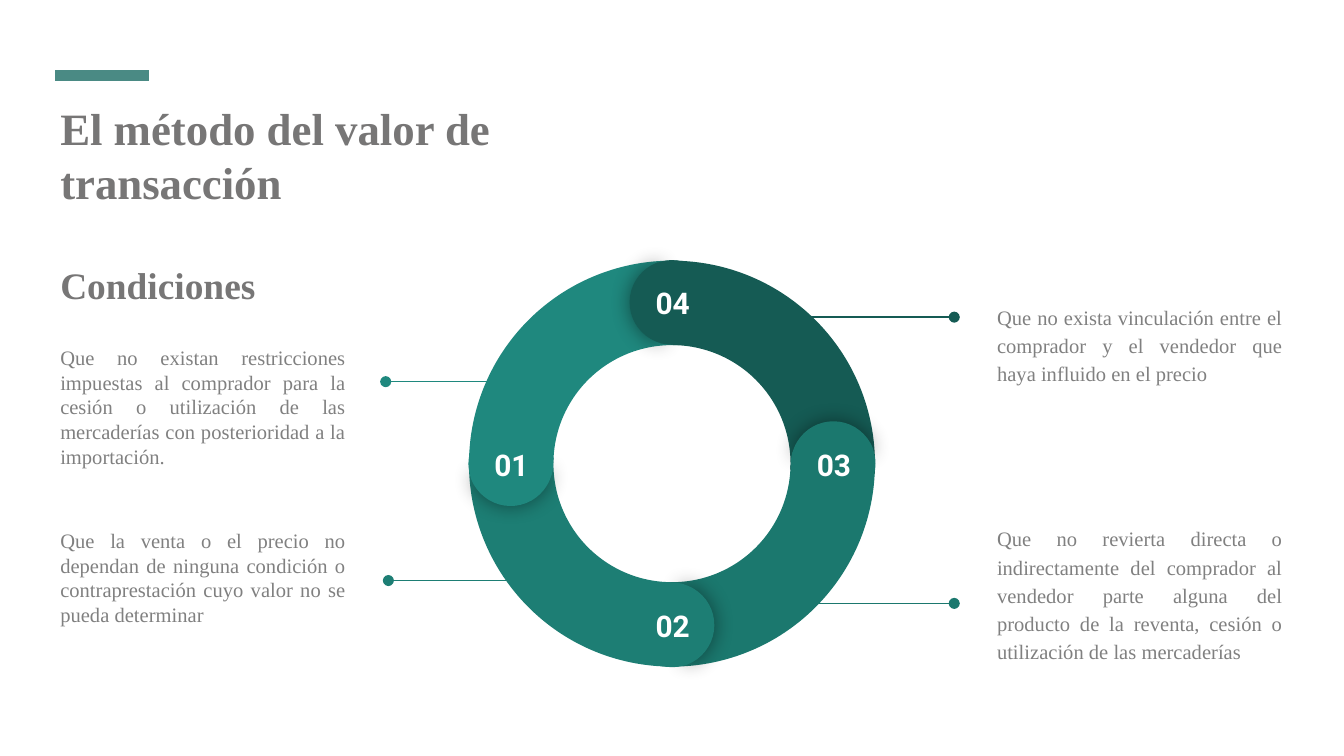
from math import cos, radians, sin

from lxml import etree
from pptx import Presentation
from pptx.dml.color import RGBColor
from pptx.enum.shapes import MSO_CONNECTOR, MSO_SHAPE
from pptx.enum.text import MSO_ANCHOR, PP_ALIGN
from pptx.oxml import parse_xml
from pptx.oxml.ns import nsdecls, qn
from pptx.util import Inches, Pt

COLORS = {
    "bar": "4A8A84",
    "01": "1F887E",
    "02": "1D7E74",
    "03": "1B786E",
    "04": "155B54",
    "title": "777676",
    "body": "808080",
    "white": "FFFFFF",
    "shade": "000000",
}
SERIF, SANS = "Times New Roman", "Roboto"
WIDE = 10
MID_X, MID_Y = 5, 3.45
RING, CAP, ORBIT = 3.02, 0.63, 1.2
TURNS = {"03": 0, "02": 90, "01": 180, "04": 270}
NOTES = [
    ("01", 0.35, 2.32, 1, (4.01, 2.87, 2.84),
     "Que no existan restricciones impuestas al comprador para la cesión o "
     "utilización de las mercaderías con posterioridad a la importación."),
    ("02", 0.35, 3.59, 1, (4.32, 2.89, 4.32),
     "Que la venta o el precio no dependan de ninguna condición o "
     "contraprestación cuyo valor no se pueda determinar"),
    ("03", 7.32, 3.71, 1.15, (5.7, 7.1, 4.49),
     "Que no revierta directa o indirectamente del comprador al vendedor parte "
     "alguna del producto de la reventa, cesión o utilización de las mercaderías"),
    ("04", 7.32, 1.85, 1.15, (5.7, 7.1, 2.36),
     "Que no exista vinculación entre el comprador y el vendedor que haya "
     "influido en el precio"),
]


def color(key):
    return RGBColor.from_string(COLORS[key])


def add_sector(slide, kind, x, y, size, turn, angles, key, ratio=None):
    shape = slide.shapes.add_shape(
        kind, Inches(x - size / 2), Inches(y - size / 2), Inches(size), Inches(size))
    for i, angle in enumerate(angles):
        shape.adjustments[i] = angle * 0.6
    if ratio:
        shape.adjustments[2] = ratio
    shape.rotation = turn % 360
    shape.shadow.inherit = False
    shape.fill.solid()
    shape.fill.fore_color.rgb = color(key)
    shape.line.fill.background()
    return shape


def add_glow(shape):
    effects = shape._element.spPr.find(qn("a:effectLst"))
    effects.append(parse_xml(
        f'<a:outerShdw {nsdecls("a")} blurRad="{Pt(11.2)}" dist="0" dir="0" '
        'algn="ctr" rotWithShape="0">'
        f'<a:srgbClr val="{COLORS["shade"]}"><a:alpha val="43000"/></a:srgbClr>'
        '</a:outerShdw>'))


def add_line(slide, start, end, y, key, width, dot=False):
    line = slide.shapes.add_connector(
        MSO_CONNECTOR.STRAIGHT, Inches(start), Inches(y), Inches(end), Inches(y))
    line.line.color.rgb = color(key)
    line.line.width = Pt(width)
    if dot:
        etree.SubElement(line.line._get_or_add_ln(), qn("a:tailEnd"), type="oval")
    etree.SubElement(line._element.spPr, qn("a:effectLst"))


def add_box(slide, x, y, width, height, anchor=MSO_ANCHOR.TOP):
    box = slide.shapes.add_textbox(
        Inches(x), Inches(y), Inches(width), Inches(height))
    frame = box.text_frame
    frame.word_wrap = True
    frame.vertical_anchor = anchor
    frame.margin_left = frame.margin_right = Inches(0.1)
    frame.margin_top = frame.margin_bottom = Inches(0.1)
    return frame


def add_run(para, text, font, size, key, bold=False):
    run = para.add_run()
    run.text = text
    run.font.name = font
    run.font.size = Pt(size)
    run.font.bold = bold
    run.font.color.rgb = color(key)


def add_title(slide):
    frame = add_box(slide, 0.35, 0.65, 3.65, 1.75)
    add_run(frame.paragraphs[0], "El método del valor de transacción",
            SERIF, 24, "title", True)
    para = frame.add_paragraph()
    para.space_before = Pt(29)
    add_run(para, "Condiciones", SERIF, 20, "title", True)


def add_cap(slide, key):
    turn = TURNS[key]
    x = MID_X + ORBIT * cos(radians(turn))
    y = MID_Y + ORBIT * sin(radians(turn))
    back = add_sector(slide, MSO_SHAPE.PIE, x, y, CAP, turn + 90.7,
                      (103.2, 249.9), key)
    add_glow(back)
    add_sector(slide, MSO_SHAPE.PIE, x, y, CAP, turn + 270, (67.1, 286.4), key)
    label = add_box(slide, x - 0.27, y - 0.23, 0.55, 0.29).paragraphs[0]
    label.alignment = PP_ALIGN.CENTER
    add_run(label, key, SANS, 16, "white", True)


def add_note(slide, key, x, y, space, span, text):
    para = add_box(slide, x, y, 2.32, 1.41, MSO_ANCHOR.MIDDLE).paragraphs[0]
    para.alignment = PP_ALIGN.JUSTIFY
    para.line_spacing = space
    add_run(para, text, SERIF, 11, "body")
    add_line(slide, *span, key, 0.75, dot=True)


def main():
    deck = Presentation()
    deck.slide_width, deck.slide_height = Inches(WIDE), Inches(WIDE * 9 / 16)
    slide = deck.slides.add_slide(deck.slide_layouts[6])
    add_line(slide, 0.41, 1.11, 0.56, "bar", 6)
    for key, turn in TURNS.items():
        add_sector(slide, MSO_SHAPE.BLOCK_ARC, MID_X, MID_Y, RING, turn + 150,
                   (210.4, 302.9), key, 0.208)
    for key in TURNS:
        add_cap(slide, key)
    for note in NOTES:
        add_note(slide, *note)
    add_title(slide)
    deck.save("out.pptx")


if __name__ == "__main__":
    main()
